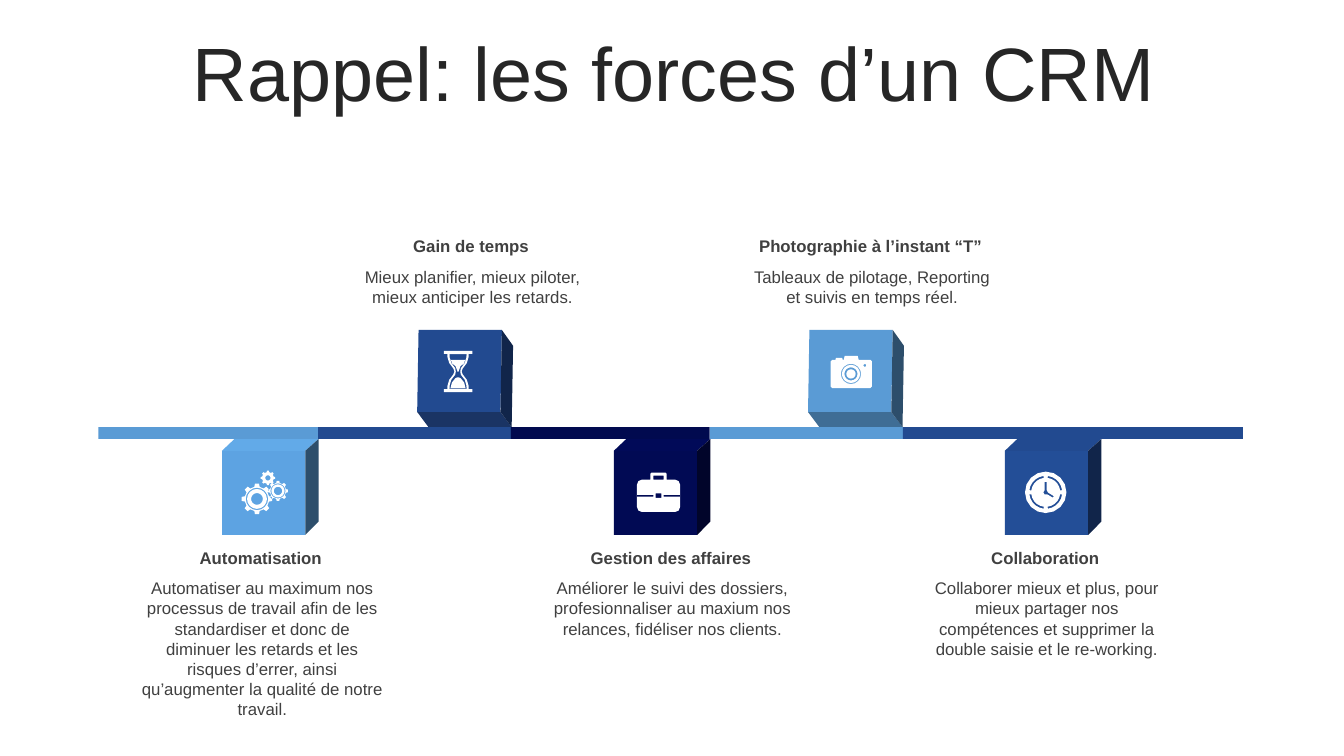
from math import cos, pi, sin

from pptx import Presentation
from pptx.dml.color import RGBColor
from pptx.enum.shapes import MSO_SHAPE
from pptx.enum.text import MSO_ANCHOR, MSO_AUTO_SIZE, PP_ALIGN
from pptx.util import Pt

RECT = MSO_SHAPE.RECTANGLE
CENTER = PP_ALIGN.CENTER
MIDDLE, TOP = MSO_ANCHOR.MIDDLE, MSO_ANCHOR.TOP
FIT, NO_FIT = MSO_AUTO_SIZE.SHAPE_TO_FIT_TEXT, MSO_AUTO_SIZE.NONE

WHITE, LIGHT, MEDIUM, DARK = "FFFFFF", "5A9BD5", "224A90", "010A4F"
# Front, top or bottom, and side of each cube
LIGHT_LOW = ("5DA3E2", "62AAE8", "2D4E6B")
DARK_LOW = ("010A54", "010A58", "01052A")
MEDIUM_LOW = ("234E97", "224A90", "11254A")
MEDIUM_HIGH = (MEDIUM, "1A3464", "11254A")
LIGHT_HIGH = (LIGHT, "3F6D95", "2D4E6B")

# Left of cube, left of text, hanging below the bar, faces, heading, text, lines
STRENGTHS = [
    (158.6, 93.8, True, LIGHT_LOW, "Automatisation",
     "Automatiser au maximum nos processus de travail afin de les standardiser "
     "et donc de diminuer les retards et les risques d’errer, ainsi "
     "qu’augmenter la qualité de notre travail.", 7),
    (298, 244, False, MEDIUM_HIGH, "Gain de temps",
     "Mieux planifier, mieux piloter, mieux anticiper les retards.", 2),
    (438.5, 386.8, True, DARK_LOW, "Gestion des affaires",
     "Améliorer le suivi des dossiers, profesionnaliser au maxium nos "
     "relances, fidéliser nos clients.", 3),
    (577.2, 529.4, False, LIGHT_HIGH, "Photographie à l’instant “T”",
     "Tableaux de pilotage, Reporting et suivis en temps réel.", 2),
    (717.8, 654.2, True, MEDIUM_LOW, "Collaboration",
     "Collaborer mieux et plus, pour mieux partager nos compétences et "
     "supprimer la double saisie et le re-working.", 4),
]
BAR_EDGES = [70.3, 227.3, 365, 507, 645, 887.8]
BAR_COLORS = [LIGHT, MEDIUM, DARK, LIGHT, MEDIUM]


def rgb(color):
    return RGBColor.from_string(color)


def paint(sp, color):
    sp.shadow.inherit = False
    sp.fill.solid()
    sp.fill.fore_color.rgb = rgb(color)
    sp.line.fill.background()


def rect(s, x, y, w, h, color):
    paint(s.shapes.add_shape(RECT, Pt(x), Pt(y), Pt(w), Pt(h)), color)


def outline(s, contours, color):
    """One shape from closed contours; an inner contour cuts a hole."""
    paths = [[(Pt(x), Pt(y)) for x, y in points] for points in contours]
    fb = s.shapes.build_freeform(*paths[0][0], scale=1.0)
    for i, pts in enumerate(paths):
        if i:
            fb.move_to(*pts[0])
        fb.add_line_segments(pts[1:], close=True)
    paint(fb.convert_to_shape(), color)


def text(s, x, y, w, h, words, size, color, bold=False, anchor=TOP,
         fit=FIT, para=None):
    tf = s.shapes.add_textbox(Pt(x), Pt(y), Pt(w), Pt(h)).text_frame
    for name, value in {"word_wrap": True, "auto_size": fit,
                        "vertical_anchor": anchor}.items():
        setattr(tf, name, value)
    p = tf.paragraphs[0]
    for name, value in {"alignment": CENTER, **(para or {})}.items():
        setattr(p, name, value)
    r = p.add_run()
    r.text = words
    for name, value in {"name": "Arial", "size": Pt(size), "bold": bold}.items():
        setattr(r.font, name, value)
    r.font.color.rgb = rgb(color)


def cube(s, x, below, faces):
    """Front face with one visible side and the face that meets the bar."""
    if below:
        front = [(x, 322), (x + 59.5, 322), (x + 59.5, 382), (x, 382)]
        back = [(x + 9, 313.5), (x + 69, 313.5), (x + 69, 372.5)]
        edge = [front[0], back[0], back[1], front[1]]
        rect(s, x, 322, 59.5, 60, faces[0])
    else:
        front = [(x + 1, 235.7), (x + 60.5, 235.7), (x + 59.5, 294.3),
                 (x, 294.3)]
        back = [(x + 8, 305), (x + 68.5, 247), (x + 67.5, 305)]
        edge = [front[3], front[2], back[2], back[0]]
        outline(s, [front], faces[0])
    outline(s, [edge], faces[1])
    outline(s, [[front[1], back[1], back[2], front[2]]], faces[2])


def arc(cx, cy, radius, start, end, steps):
    angles = [start + (end - start) * i / steps for i in range(steps + 1)]
    return [(cx + radius * cos(a), cy + radius * sin(a)) for a in angles]


def circle(cx, cy, radius):
    return arc(cx, cy, radius, 0, 2 * pi, 16)[:-1]


def box(x, y, w, h):
    return [(x, y), (x + w, y), (x + w, y + h), (x, y + h)]


def gear(cx, cy, radius, rings):
    points = []
    for i in range(8):
        for turn, reach in ((-0.28, 0.8), (-0.17, 1), (0.17, 1), (0.28, 0.8)):
            points += arc(cx, cy, radius * reach, 2 * pi * (i + turn) / 8, 0, 1)[:1]
    return [points] + [circle(cx, cy, ring) for ring in rings]


def gears():
    return (gear(183.6, 356.4, 11, (8, 7.1, 4.2))
            + gear(198.6, 350.7, 7.2, (5.4, 4.7, 3))
            + gear(191.4, 341.4, 5.2, (1.9,)))


def hourglass():
    cx, cy = 327.2, 265.3
    # Half profiles from top to bottom: offset from the neck, half width
    glass = [(-14.7, 10.2), (-12.6, 10.2), (-12.6, 7.6), (-10.5, 7.6),
             (-6, 6.3), (-2, 3.3), (0, 2.6)]
    hollow = [(-12.4, 6.1), (-10, 6), (-6, 4.8), (-2.3, 2), (0, 1.6)]
    halves = [half + [(-dy, w) for dy, w in half[-2::-1]]
              for half in (glass, hollow)]
    halves += [[(-8.3, 5.2), (-5.5, 4), (-3.8, 1.8), (0.4, 0.2)],
               [(4.3, 0.8), (5, 2), (8, 4.4), (12, 5.4)]]
    return [[(cx + w, cy + dy) for dy, w in half]
            + [(cx - w, cy + dy) for dy, w in reversed(half)]
            for half in halves]


def briefcase():
    cx = 470.4
    # Right half of the case and its handle, from top to bottom
    half = [(5.1, 337.7), (5.8, 338.4), (5.8, 342.7), (12, 342.7),
            (14.4, 343.7), (15.4, 346.2), (15.4, 362.2), (14.4, 364.7),
            (12, 365.7)]
    case = ([(cx + w, y) for w, y in half]
            + [(cx - w, y) for w, y in reversed(half)])
    return [case, box(cx - 3.6, 339.8, 7.2, 2.9),
            box(cx - 15.4, 353.5, 11.8, 1.3), box(cx + 3.6, 353.5, 11.8, 1.3),
            box(cx - 2.1, 352.5, 4.2, 3.2)]


def camera():
    body = [(594.5, 257), (596.8, 257), (597.2, 255.6), (601.6, 255.6),
            (602, 257), (602.7, 257), (603.4, 254.2), (612.7, 254.2),
            (613.4, 257), (621.7, 257), (622.9, 258.2), (622.9, 276),
            (621.7, 277.2), (594.5, 277.2), (593.3, 276), (593.3, 258.2)]
    rings = [circle(607.9, 267.1, radius) for radius in (7.2, 6.5, 4.7, 3.3)]
    return [body] + rings + [circle(617.8, 261, 1)]


def clock():
    cx, cy = 747, 351.7
    contours = [circle(cx, cy, 14.8)]
    for quarter in range(4):
        start, end = quarter * pi / 2 + 0.13, (quarter + 1) * pi / 2 - 0.13
        contours.append(arc(cx, cy, 11.8, start, end, 5)
                        + arc(cx, cy, 10.4, end, start, 5))
    hands = [(-0.7, -7.5), (0.7, -7.5), (0.7, -1.6), (1.7, 0.2), (5.8, 2.7),
             (5.1, 3.8), (1, 1.4), (-0.8, 1.5), (-1.7, 0), (-0.7, -1.6)]
    return contours + [[(cx + dx, cy + dy) for dx, dy in hands]]


def main():
    prs = Presentation()
    prs.slide_width, prs.slide_height = Pt(960), Pt(540)
    s = prs.slides.add_slide(prs.slide_layouts[6])

    # Title
    text(s, 25.2, 26.6, 912, 56.9, "Rappel: les forces d’un CRM", 54,
         "262626", anchor=MIDDLE, fit=NO_FIT,
         para={"line_spacing": 0.9, "space_before": Pt(10)})

    # Cubes with their icons, headings and texts
    icons = (gears, hourglass, briefcase, camera, clock)
    for icon, strength in zip(icons, STRENGTHS):
        x, left, below, faces, heading, words, lines = strength
        cube(s, x, below, faces)
        outline(s, icon(), WHITE)
        y = 387.5 if below else 165.1
        text(s, left, y, 185, 21.8, heading, 12, "404040", bold=True)
        text(s, left, y + 21.8, 187.2, 14.5 * lines + 7.2, words, 12, "404040")

    # Timeline bar
    for start, end, color in zip(BAR_EDGES, BAR_EDGES[1:], BAR_COLORS):
        rect(s, start, 305, end - start, 8.6, color)

    prs.save("out.pptx")


if __name__ == "__main__":
    main()
